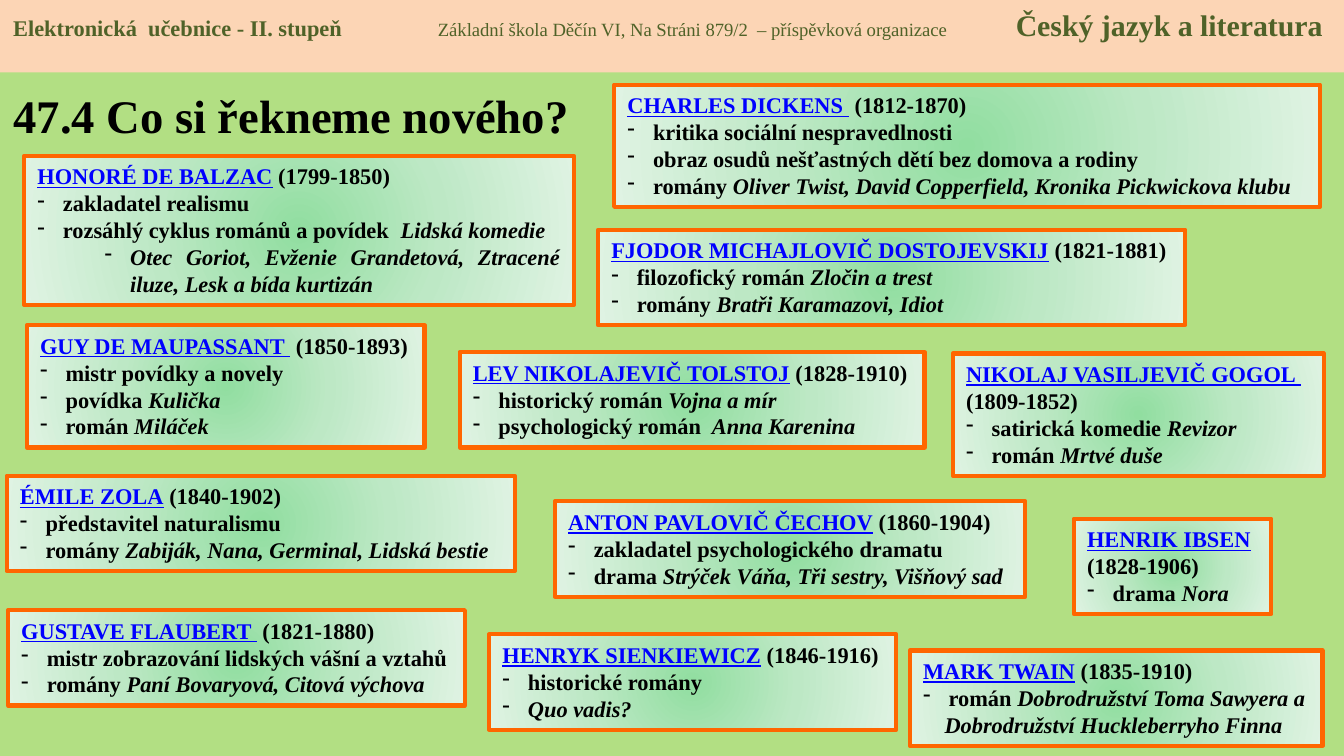
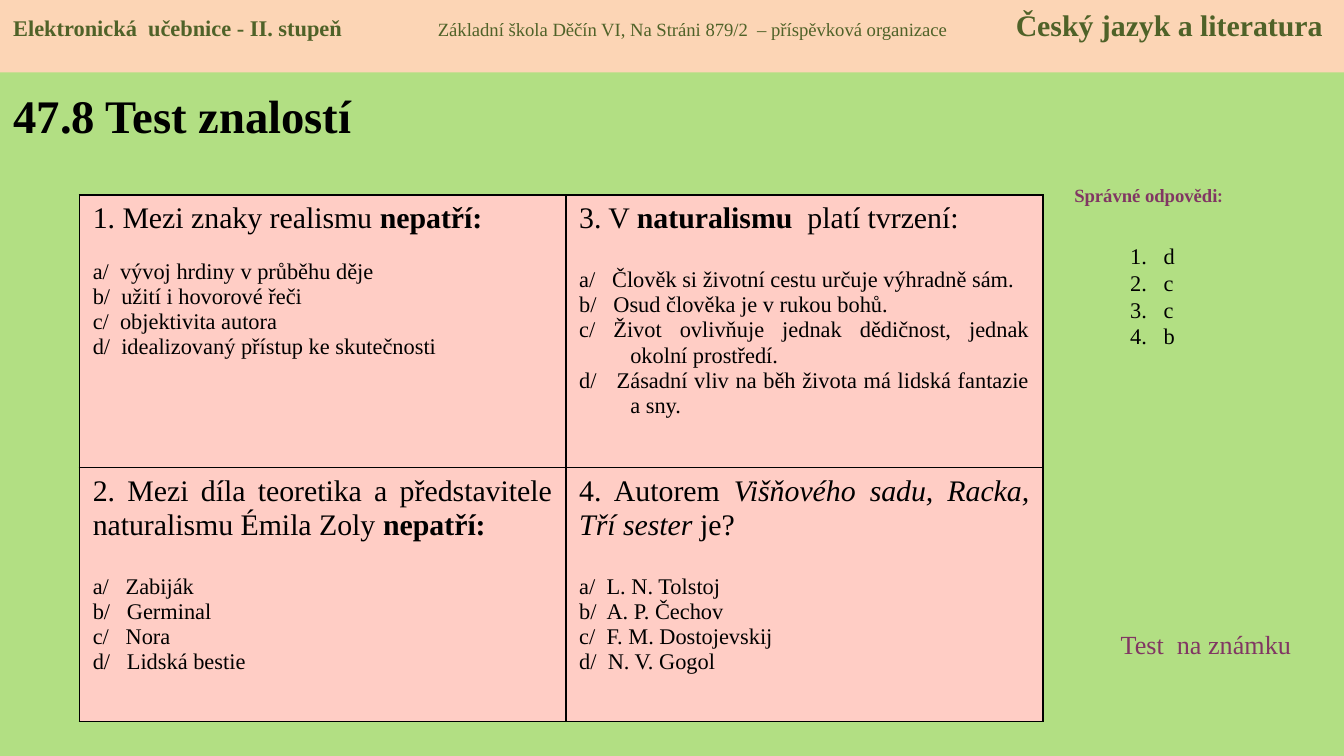
from pptx import Presentation
from pptx.dml.color import RGBColor
from pptx.enum.shapes import MSO_SHAPE
from pptx.enum.text import MSO_ANCHOR, MSO_AUTO_SIZE, PP_ALIGN
from pptx.oxml import parse_xml
from pptx.oxml.ns import nsdecls, qn
from pptx.util import Inches, Pt

RECTANGLE = MSO_SHAPE.RECTANGLE
TOP, MIDDLE = MSO_ANCHOR.TOP, MSO_ANCHOR.MIDDLE
LEFT, CENTER, JUSTIFY = PP_ALIGN.LEFT, PP_ALIGN.CENTER, PP_ALIGN.JUSTIFY
GROW, FIXED = MSO_AUTO_SIZE.SHAPE_TO_FIT_TEXT, MSO_AUTO_SIZE.NONE

# Colours and fonts
BLACK = RGBColor(0x00, 0x00, 0x00)
GREEN_PAGE = RGBColor(0xB2, 0xDF, 0x83)
PEACH = RGBColor(0xFC, 0xD5, 0xB5)
OLIVE = RGBColor(0x4F, 0x62, 0x28)
ORANGE = RGBColor(0xFF, 0x66, 0x00)
BLUE = RGBColor(0x00, 0x00, 0xFF)
PLUM = RGBColor(0x81, 0x37, 0x63)
PINK = RGBColor(0xFF, 0xCD, 0xC5)
GREENS = [RGBColor(0x91, 0xDE, 0xA0), RGBColor(0xBD, 0xE8, 0xC5), RGBColor(0xDF, 0xF3, 0xE3)]
SERIF, SANS = "Times New Roman", "Calibri"

# Text formats
TITLE = {"size": Pt(25), "bold": True}
NAME = {"size": Pt(12), "bold": True, "underline": True, "color": BLUE}
FACT = {"size": Pt(12), "bold": True}
WORK = {**FACT, "italic": True}
QUESTION = {"size": Pt(16)}
KEY = {**QUESTION, "bold": True}
CITED = {**QUESTION, "italic": True}
OPTION = {"size": Pt(12)}
LABEL = {"size": Pt(10), "bold": True, "color": PLUM}
NOTE = {"size": Pt(14), "color": PLUM}

# Paragraph styles: left indent, first line indent, bullet parts, alignment
DASH = ('<a:buFontTx %s/>' % nsdecls("a"), '<a:buChar %s char="-"/>' % nsdecls("a"))
NUMBER = ('<a:buAutoNum %s type="arabicPeriod"/>' % nsdecls("a"),)
PLAIN = (0, 0, (), LEFT)
ITEM = (0.19, -0.19, DASH, LEFT)
SUBITEM = (0.69, -0.19, DASH, JUSTIFY)
FOLLOWING = (0.16, 0, (), LEFT)
NUMBERED = (0.25, -0.25, NUMBER, LEFT)
ASKED = (0, 0, (), JUSTIFY)
CHOICE = (0.38, -0.38, (), JUSTIFY)
CENTERED = (0, 0, (), CENTER)

HEADER = [
    ("Elektronická  učebnice - II. stupeň", {"size": Pt(12), "bold": True, "color": OLIVE}),
    ("\tZákladní škola Děčín VI, Na Stráni 879/2  – příspěvková organizace",
     {"size": Pt(10), "color": OLIVE}),
    ("\tČeský jazyk a literatura", {"size": Pt(16), "bold": True, "color": OLIVE}),
]
HEADER_TABS = (3.16, 7.46)

# Authors: name, years, (left, top, width, text rows), lines of (fact, works[, style])
AUTHORS = [
    ("HONORÉ DE BALZAC", " (1799-1850)", (0.18, 1.16, 4.09, 5), [
        ("zakladatel realismu", ""),
        ("rozsáhlý cyklus románů a povídek ", " Lidská komedie"),
        ("", "Otec Goriot, Evženie Grandetová, Ztracené iluze, Lesk a bída kurtizán", SUBITEM)]),
    ("GUY DE MAUPASSANT ", " (1850-1893)", (0.2, 2.42, 2.96, 4), [
        ("mistr povídky a novely", ""), ("povídka ", "Kulička"), ("román", " Miláček")]),
    ("ÉMILE ZOLA", " (1840-1902)", (0.05, 3.54, 3.78, 3), [
        ("představitel naturalismu", ""),
        ("romány ", "Zabiják, Nana, Germinal, Lidská bestie")]),
    ("GUSTAVE FLAUBERT ", " (1821-1880)", (0.06, 4.54, 3.4, 3), [
        ("mistr zobrazování lidských vášní a vztahů", ""),
        ("romány ", "Paní Bovaryová, Citová výchova")]),
    ("CHARLES DICKENS ", " (1812-1870)", (4.57, 0.63, 5.25, 4), [
        ("kritika sociální nespravedlnosti", ""),
        ("obraz osudů nešťastných dětí bez domova a rodiny", ""),
        ("romány ", "Oliver Twist, David Copperfield, Kronika Pickwickova klubu")]),
    ("NIKOLAJ VASILJEVIČ GOGOL ", " ", (7.09, 2.63, 2.76, 4), [
        ("(1809-1852)", "", PLAIN),
        ("satirická komedie ", "Revizor"), ("román ", "Mrtvé duše")]),
    ("LEV NIKOLAJEVIČ TOLSTOJ", " (1828-1910)", (3.42, 2.62, 3.46, 3), [
        ("historický román ", "Vojna a mír"), ("psychologický román ", " Anna Karenina")]),
    ("FJODOR MICHAJLOVIČ DOSTOJEVSKIJ", " (1821-1881)", (4.45, 1.71, 4.37, 3), [
        ("filozofický román ", "Zločin a trest"), ("romány ", "Bratři Karamazovi, Idiot")]),
    ("ANTON PAVLOVIČ ČECHOV", " (1860-1904)", (4.13, 3.73, 3.5, 3), [
        ("zakladatel psychologického dramatu", ""),
        ("drama ", "Strýček Váňa, Tři sestry, Višňový sad")]),
    ("HENRYK SIENKIEWICZ", " (1846-1916)", (3.64, 4.72, 3.03, 3), [
        ("historické romány", ""), ("", "Quo vadis?")]),
    ("HENRIK IBSEN", " ", (7.99, 3.86, 1.47, 3), [
        ("(1828-1906)", "", PLAIN), ("drama ", "Nora")]),
    ("MARK TWAIN", " (1835-1910)", (6.77, 4.84, 3.07, 3), [
        ("román ", "Dobrodružství Toma Sawyera a"),
        ("", "Dobrodružství Huckleberryho Finna", FOLLOWING)]),
]

# Test cells by row: question spans, gap below in points, options
TEST = [
    [([("1. Mezi znaky realismu ", QUESTION), ("nepatří:", KEY)], 13,
      ["a/  vývoj hrdiny v průběhu děje", "b/  užití i hovorové řeči",
       "c/  objektivita autora", "d/  idealizovaný přístup ke skutečnosti"]),
     ([("3. V ", QUESTION), ("naturalismu ", KEY), (" platí tvrzení:", QUESTION)], 17.5,
      ["a/   Člověk si životní cestu určuje výhradně sám.",
       "b/   Osud člověka je v rukou bohů.",
       "c/ Život ovlivňuje jednak dědičnost, jednak okolní prostředí.",
       "d/   Zásadní vliv na běh života má lidská fantazie a sny."])],
    [([("2. Mezi díla teoretika a představitele naturalismu Émila Zoly ", QUESTION),
       ("nepatří:", KEY)], 17.5,
      ["a/   Zabiják", "b/   Germinal", "c/   Nora", "d/   Lidská bestie"]),
     ([("4. Autorem ", QUESTION), ("Višňového sadu, Racka, Tří sester ", CITED),
       ("je?", QUESTION)], 17.5,
      ["a/  L. N. Tolstoj", "b/  A. P. Čechov", "c/  F. M. Dostojevskij", "d/  N. V. Gogol"])],
]
COLUMN_WIDTHS, ROW_HEIGHTS = (3.62, 3.55), (2.03, 1.89)
ANSWERS = "dccb"


def inches(*lengths):
    return [Inches(length) for length in lengths]


def write(frame, lines):
    """Fill a text frame from lines of (spans, style, line spacing, gap below)."""
    for index, (spans, style, spacing, gap) in enumerate(lines):
        para = frame.paragraphs[0] if index == 0 else frame.add_paragraph()
        left, first, bullet, para.alignment = style
        para.line_spacing, para.space_after = Pt(spacing), Pt(gap)
        properties = para._p.get_or_add_pPr()
        if left:
            properties.set("marL", str(Inches(left)))
            properties.set("indent", str(Inches(first)))
        for part in bullet:
            properties.append(parse_xml(part))
        for text, formats in spans:
            span = para.add_run()
            span.text = text
            values = {"name": SERIF, "color": BLACK, **formats}
            span.font.color.rgb = values.pop("color")
            for key, value in values.items():
                setattr(span.font, key, value)


def fill_radial(shape, colors):
    """Give a shape a circular gradient running out from the centre."""
    shape.fill.gradient()
    owner = shape._element.spPr
    stops = "".join(f'<a:gs pos="{index * 50000}"><a:srgbClr val="{color}"/></a:gs>'
                    for index, color in enumerate(colors))
    owner.replace(owner.find(qn("a:gradFill")), parse_xml(
        f'<a:gradFill {nsdecls("a")} rotWithShape="1"><a:gsLst>{stops}</a:gsLst>'
        '<a:path path="circle"><a:fillToRect l="50000" t="50000" r="50000" b="50000"/>'
        '</a:path></a:gradFill>'))


def fill_solid(fill, color):
    fill.solid()
    fill.fore_color.rgb = color


def add_box(page, place):
    box = page.shapes.add_shape(RECTANGLE, *inches(*place))
    box.shadow.inherit = False
    box.text_frame.vertical_anchor = TOP
    return box


def add_header(page):
    band = add_box(page, (0, 0, 10, 0.54))
    fill_solid(band.fill, PEACH)
    band.line.fill.background()
    write(band.text_frame, [(HEADER, PLAIN, 19.2, 0)])
    stops = "".join(f'<a:tab pos="{Inches(stop)}" algn="l"/>' for stop in HEADER_TABS)
    band.text_frame.paragraphs[0]._p.pPr.append(
        parse_xml(f'<a:tabLst {nsdecls("a")}>{stops}</a:tabLst>'))


def add_page(deck, layout, title, width):
    page = deck.slides.add_slide(layout)
    subtitle = page.placeholders[1]._element
    subtitle.getparent().remove(subtitle)
    heading = page.shapes.title
    heading.left, heading.top, heading.width, heading.height = inches(0, 0.53, width, 0.65)
    frame = heading.text_frame
    frame.auto_size, frame.vertical_anchor = FIXED, MIDDLE
    write(frame, [([(title, TITLE)], PLAIN, 30, 0)])
    add_header(page)
    return page


def add_author(page, name, years, place, facts):
    left, top, width, rows = place
    box = add_box(page, (left, top, width, 0.11 + 0.2 * rows))
    fill_radial(box, GREENS)
    box.line.color.rgb, box.line.width = ORANGE, Pt(2.25)
    lines = [([(name, NAME), (years, FACT)], PLAIN, 14.4, 0)]
    for fact, works, *style in facts:
        spans = [span for span in ((fact, FACT), (works, WORK)) if span[0]]
        lines.append((spans, style[0] if style else ITEM, 14.4, 0))
    box.text_frame.auto_size = GROW
    box.text_frame.word_wrap = any(line[1] is SUBITEM for line in lines)
    write(box.text_frame, lines)


def add_text(page, place, lines, top_margin=0.05):
    frame = page.shapes.add_textbox(*inches(*place)).text_frame
    frame.word_wrap, frame.margin_top = True, Inches(top_margin)
    write(frame, lines)


def add_borders(cell):
    for index, side in enumerate(("lnL", "lnR", "lnT", "lnB")):
        cell._tc.get_or_add_tcPr().insert(index, parse_xml(
            f'<a:{side} {nsdecls("a")} w="{Pt(1)}"><a:solidFill>'
            f'<a:srgbClr val="{BLACK}"/></a:solidFill></a:{side}>'))


def add_test(page):
    size = (sum(COLUMN_WIDTHS), sum(ROW_HEIGHTS))
    table = page.shapes.add_table(len(TEST), len(TEST[0]), *inches(0.59, 1.45, *size)).table
    table.first_row = table.horz_banding = False
    for column, width in zip(table.columns, COLUMN_WIDTHS):
        column.width = Inches(width)
    for row, height, entries in zip(table.rows, ROW_HEIGHTS, TEST):
        row.height = Inches(height)
        for cell, (question, gap, options) in zip(row.cells, entries):
            fill_solid(cell.fill, PINK)
            add_borders(cell)
            write(cell.text_frame, [(question, ASKED, 18, gap)] + [
                ([(option, OPTION)], CHOICE, 13.4, 0) for option in options])


def main():
    deck = Presentation()
    deck.slide_width = Inches(10)
    deck.slide_height = deck.slide_width * 9 // 16
    layout = deck.slide_layouts.get_by_name("Title Slide")
    fill_solid(layout.background.fill, GREEN_PAGE)

    # Authors
    page = add_page(deck, layout, "47.4 Co si řekneme nového?", 4.89)
    for author in AUTHORS:
        add_author(page, *author)

    # Test
    page = add_page(deck, layout, "47.8 Test znalostí", 3.19)
    add_text(page, (7.76, 1.32, 1.57, 0.27), [
        ([("Správné odpovědi", LABEL), (":", {**LABEL, "name": SANS})], CENTERED, 12, 0)])
    add_test(page)
    add_text(page, (8.31, 1.55, 0.55, 1.31), [
        ([(answer, OPTION)], NUMBERED, 14.4, 0) for answer in ANSWERS], top_margin=0.25)
    add_text(page, (8.24, 4.63, 1.57, 0.34), [([("Test  na známku", NOTE)], PLAIN, 16.8, 0)])

    deck.save("out.pptx")


if __name__ == "__main__":
    main()
